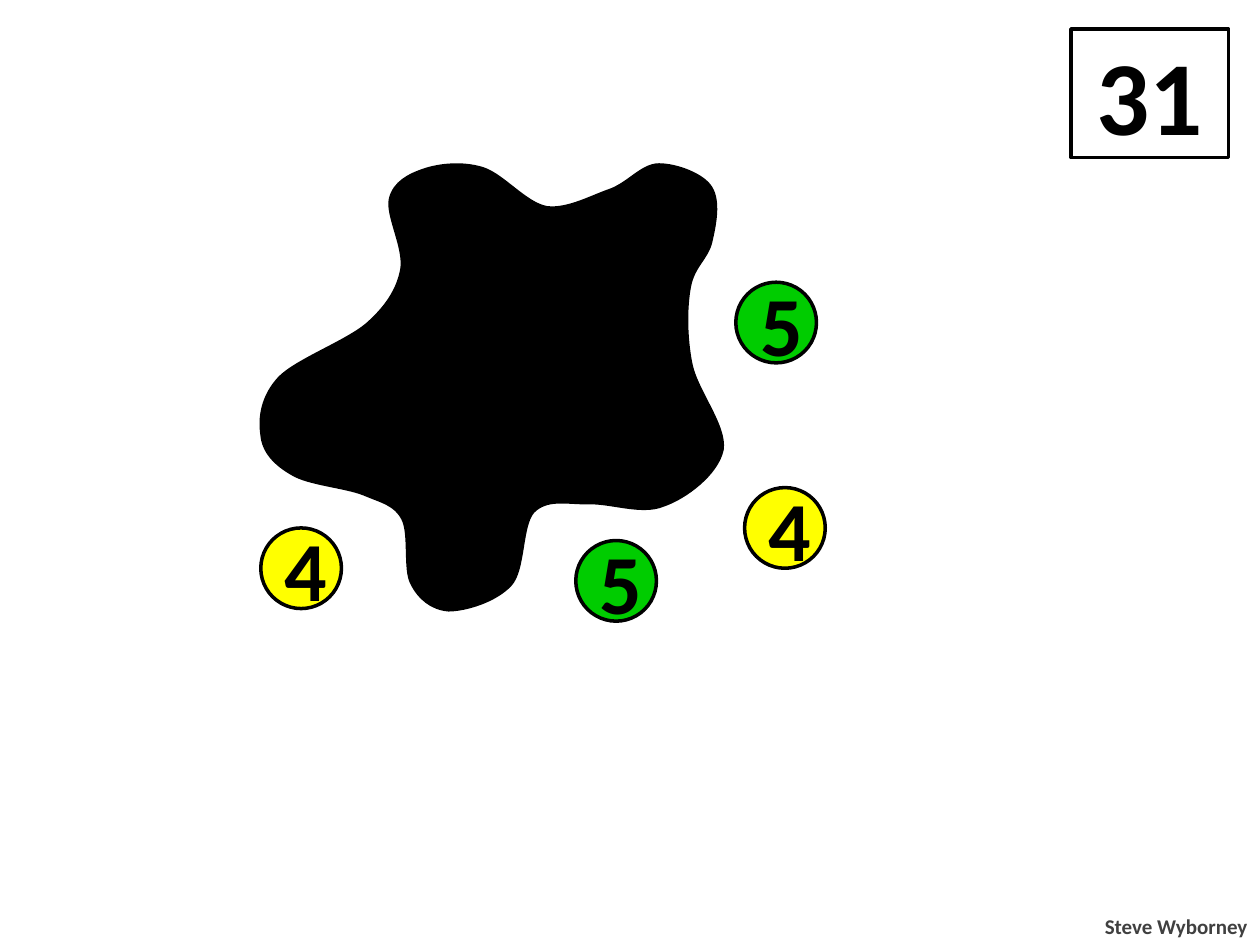
"""Build the splat number puzzle slide with its total, counters and ink blot."""
from typing import NamedTuple

from lxml.etree import SubElement
from pptx import Presentation
from pptx.dml.color import RGBColor
from pptx.enum.shapes import MSO_SHAPE as Preset
from pptx.enum.text import MSO_ANCHOR as Anchor, MSO_AUTO_SIZE as AutoSize, PP_ALIGN as Align
from pptx.oxml.ns import qn
from pptx.util import Inches, Pt

BLACK = RGBColor(0x00, 0x00, 0x00)
WHITE = RGBColor(0xFF, 0xFF, 0xFF)
YELLOW = RGBColor(0xFF, 0xFF, 0x00)
GREEN = RGBColor(0x00, 0xCC, 0x00)
GRAY = RGBColor(0x40, 0x40, 0x40)
COUNTER_SIZE = 0.64
UNIT = Inches(0.01)


class Counter(NamedTuple):
    left: float
    top: float
    label: str
    color: RGBColor


class Curve(NamedTuple):
    x1: int
    y1: int
    x2: int
    y2: int
    x: int
    y: int


COUNTERS = [
    Counter(2.07, 4.19, "4", YELLOW),
    Counter(5.91, 3.87, "4", YELLOW),
    Counter(4.57, 4.29, "5", GREEN),
    Counter(5.84, 2.24, "5", GREEN),
]
SPLAT_CURVES = [
    Curve(218, 368, 209, 358, 208, 345),
    Curve(206, 332, 208, 315, 222, 300),
    Curve(236, 286, 274, 272, 291, 258),
    Curve(307, 244, 316, 230, 319, 214),
    Curve(322, 197, 307, 171, 310, 158),
    Curve(313, 145, 325, 139, 337, 135),
    Curve(349, 131, 367, 129, 383, 134),
    Curve(399, 139, 417, 162, 434, 165),
    Curve(451, 167, 470, 156, 485, 151),
    Curve(500, 145, 510, 131, 523, 131),
    Curve(537, 131, 558, 139, 564, 149),
    Curve(571, 160, 567, 179, 564, 192),
    Curve(561, 205, 550, 211, 547, 228),
    Curve(544, 244, 544, 267, 548, 288),
    Curve(552, 310, 576, 338, 573, 357),
    Curve(569, 376, 544, 395, 526, 401),
    Curve(509, 408, 484, 398, 466, 399),
    Curve(449, 399, 434, 395, 423, 406),
    Curve(413, 417, 416, 452, 405, 464),
    Curve(393, 477, 369, 484, 356, 484),
    Curve(343, 483, 333, 475, 327, 463),
    Curve(321, 452, 326, 424, 320, 412),
    Curve(314, 400, 303, 398, 289, 392),
    Curve(274, 386, 245, 384, 232, 376),
]


def write_text(box, text: str, size: int, color: RGBColor, align: Align) -> None:
    para = box.text_frame.paragraphs[0]
    para.alignment = align
    span = para.add_run()
    span.text = text
    span.font.color.rgb = color
    for name, value in {"name": "Calibri", "size": Pt(size), "bold": True}.items():
        setattr(span.font, name, value)


def paint(shape, color: RGBColor) -> None:
    shape.shadow.inherit = False
    shape.fill.solid()
    shape.fill.fore_color.rgb = color
    shape.line.color.rgb = BLACK
    shape.line.width = Pt(2)


def add_label(page, preset: Preset, bounds: tuple, color: RGBColor, text: str, size: int) -> None:
    shape = page.shapes.add_shape(preset, *map(Inches, bounds))
    paint(shape, color)
    shape.text_frame.vertical_anchor = Anchor.MIDDLE
    write_text(shape, text, size, BLACK, Align.CENTER)


def add_author(page) -> None:
    box = page.shapes.add_textbox(*map(Inches, (8.66, 7.2, 1.34, 0.3)))
    for name, value in {"word_wrap": False, "auto_size": AutoSize.SHAPE_TO_FIT_TEXT}.items():
        setattr(box.text_frame, name, value)
    write_text(box, "Steve Wyborney", 12, GRAY, Align.RIGHT)


def bend(segment, curve: Curve, left: int, top: int) -> None:
    bezier = segment.makeelement(qn("a:cubicBezTo"))
    for x, y in ((curve.x1, curve.y1), (curve.x2, curve.y2), (curve.x, curve.y)):
        SubElement(bezier, qn("a:pt"), x=str(x - left), y=str(y - top))
    segment.getparent().replace(segment, bezier)


def add_splat(page) -> None:
    corners = [(curve.x, curve.y) for curve in SPLAT_CURVES]
    left, top = map(min, zip(*corners))
    builder = page.shapes.build_freeform(*corners[-1], scale=UNIT)
    builder.add_line_segments(corners, close=True)
    splat = builder.convert_to_shape()
    segments = list(splat.element.iter(qn("a:lnTo")))
    for segment, curve in zip(segments, SPLAT_CURVES):
        bend(segment, curve, left, top)
    paint(splat, BLACK)


def main() -> None:
    deck = Presentation()
    deck.slide_width, deck.slide_height = Inches(10), Inches(7.5)
    page = deck.slides.add_slide(deck.slide_layouts[6])
    add_label(page, Preset.RECTANGLE, (8.5, 0.23, 1.25, 1.02), WHITE, "31", 60)
    add_author(page)
    for counter in COUNTERS:
        bounds = (counter.left, counter.top, COUNTER_SIZE, COUNTER_SIZE)
        add_label(page, Preset.OVAL, bounds, counter.color, counter.label, 48)
    add_splat(page)
    deck.save("out.pptx")


if __name__ == "__main__":
    main()
